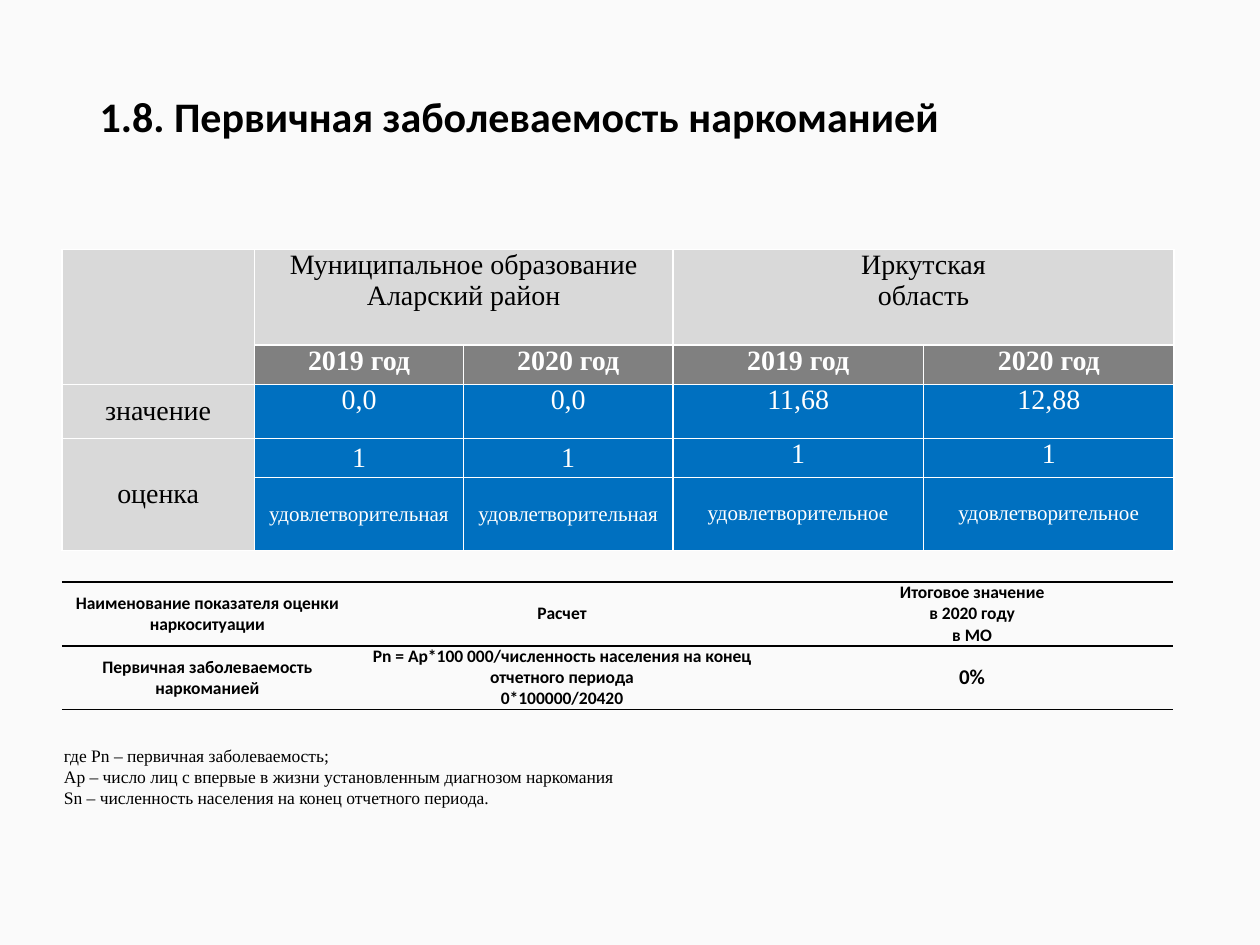
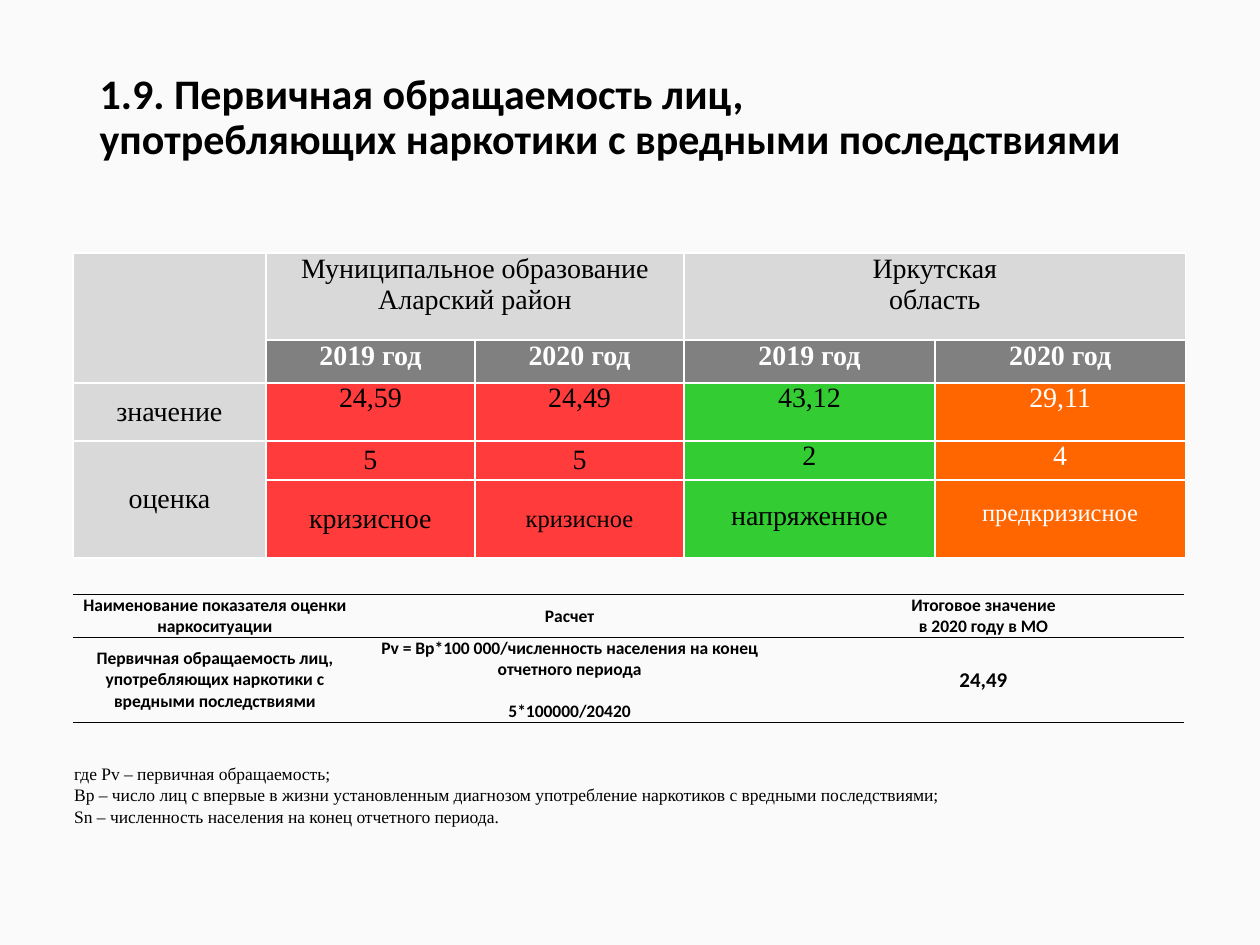
from itertools import product

from lxml.etree import SubElement
from pptx import Presentation
from pptx.dml.color import RGBColor
from pptx.enum.text import MSO_ANCHOR, MSO_AUTO_SIZE, PP_ALIGN
from pptx.oxml.ns import qn
from pptx.util import Inches, Pt

COLORS = {
    "background": "FAFAFA", "black": "000000", "white": "FFFFFF",
    "label": "D9D9D9", "year": "808080", "blue": "0070C0",
    "red": "FF3B3B", "green": "33CC33", "orange": "FF6600",
}
HEADING_FONT, TABLE_FONT = "Calibri", "Times New Roman"
REGIONS = ["Муниципальное образование Аларский район", "Иркутская\nобласть"]
YEARS = ["2019 год", "2020 год"] * 2
RATING_WIDTHS = [1.53, 1.66, 1.66, 1.99, 1.99]

# Each rating: value, score, verdict, verdict size, fill, text colour
SLIDES = [
    {
        "title": "1.8. Первичная заболеваемость наркоманией",
        "left": 0.49,
        "rating_top": 1.98,
        "rating_heights": [0.76, 0.31, 0.43, 0.31, 0.58],
        "verdict_drop": 0.19,
        "ratings": [
            ("0,0", "1", "удовлетворительная", 12, "blue", "white"),
            ("0,0", "1", "удовлетворительная", 12, "blue", "white"),
            ("11,68", "1", "удовлетворительное", 12, "blue", "white"),
            ("12,88", "1", "удовлетворительное", 12, "blue", "white"),
        ],
        "formula_top": 4.62,
        "formula_widths": [2.31, 3.32, 3.19],
        "formula_heights": [0.5, 0.5],
        "formula_gap": 0,
        "formula": [
            ["Наименование показателя оценки наркоситуации", "Расчет",
             "Итоговое значение\nв 2020 году\nв МО"],
            ["Первичная заболеваемость наркоманией",
             "Pn = Ap*100 000/численность населения на конец отчетного периода\n"
             "0*100000/20420", "0%"],
        ],
        "notes_box": (0.16, 5.86, 9.16, 0.61),
        "notes_indent": 0.25,
        "notes": [
            "где Pn – первичная заболеваемость;",
            "Ap – число лиц с впервые в жизни установленным диагнозом наркомания",
            "Sn – численность населения на конец отчетного периода.",
        ],
    },
    {
        "title": "1.9. Первичная обращаемость лиц,\v"
                 "употребляющих наркотики с вредными последствиями",
        "left": 0.58,
        "rating_top": 2.01,
        "rating_heights": [0.69, 0.34, 0.46, 0.31, 0.62],
        "verdict_drop": 0.16,
        "ratings": [
            ("24,59", "5", "кризисное", 16, "red", "black"),
            ("24,49", "5", "кризисное", 14, "red", "black"),
            ("43,12", "2", "напряженное", 16, "green", "black"),
            ("29,11", "4", "предкризисное", 14, "orange", "white"),
        ],
        "formula_top": 4.72,
        "formula_widths": [2.25, 3.38, 3.19],
        "formula_heights": [0.34, 0.67],
        "formula_gap": 12,
        "formula": [
            ["Наименование показателя оценки наркоситуации", "Расчет",
             "Итоговое значение\nв 2020 году в МО"],
            ["Первичная обращаемость лиц, употребляющих наркотики с вредными последствиями",
             "Pv = Bp*100 000/численность населения на конец отчетного периода\n"
             "5*100000/20420", "24,49"],
        ],
        "notes_box": (0.39, 6.01, 9.01, 0.61),
        "notes_indent": 0.1,
        "notes": [
            "где Pv – первичная обращаемость;",
            "Bp – число лиц с впервые в жизни установленным диагнозом "
            "употребление наркотиков с вредными последствиями;",
            "Sn – численность населения на конец отчетного периода.",
        ],
    },
]


def color(name):
    return RGBColor.from_string(COLORS[name])


def style_paragraph(paragraph, font_name, size, ink="black", bold=False, align=PP_ALIGN.CENTER):
    paragraph.alignment = align
    font = paragraph.font
    font.name, font.size, font.bold = font_name, Pt(size), bold
    font.color.rgb = color(ink)


def set_borders(cell, borders):
    """Draw 1 pt lines on the sides named in borders, and none on the rest."""
    properties = cell._tc.get_or_add_tcPr()
    for side in "LRTB":
        line = SubElement(properties, qn(f"a:ln{side}"), w=str(Pt(1)))
        if side in borders:
            fill = SubElement(line, qn("a:solidFill"))
            SubElement(fill, qn("a:srgbClr"), val=COLORS[borders[side]])
        else:
            SubElement(line, qn("a:noFill"))


def write_cell(cell, text, font_name, size, ink="black", bold=False, fill=None,
               borders=None, anchor=MSO_ANCHOR.MIDDLE, side_margin=0.05, top_margin=0):
    cell.text = text
    cell.vertical_anchor = anchor
    cell.margin_left = cell.margin_right = Inches(side_margin)
    cell.margin_top, cell.margin_bottom = Inches(top_margin), 0
    set_borders(cell, borders or {})
    if fill:
        cell.fill.solid()
        cell.fill.fore_color.rgb = color(fill)
    else:
        cell.fill.background()
    for paragraph in cell.text_frame.paragraphs:
        style_paragraph(paragraph, font_name, size, ink, bold)


def add_grid(slide, left, top, widths, heights):
    table = slide.shapes.add_table(
        len(heights), len(widths), Inches(left), Inches(top),
        Inches(sum(widths)), Inches(sum(heights))).table
    table.first_row = table.horz_banding = False
    for column, width in zip(table.columns, widths):
        column.width = Inches(width)
    for row, height in zip(table.rows, heights):
        row.height = Inches(height)
    return table


def add_title(slide, text):
    title = slide.shapes.title
    title.left, title.top, title.width, title.height = map(Inches, (0.69, 0.4, 8.62, 1.45))
    frame = title.text_frame
    frame.text = text
    frame.auto_size = MSO_AUTO_SIZE.NONE
    frame.vertical_anchor = MSO_ANCHOR.MIDDLE
    frame.margin_bottom = Inches(0.42)
    paragraph = frame.paragraphs[0]
    paragraph.line_spacing = 0.9
    style_paragraph(paragraph, HEADING_FONT, 24, bold=True, align=PP_ALIGN.LEFT)


def add_rating_table(slide, content):
    table = add_grid(slide, content["left"], content["rating_top"],
                     RATING_WIDTHS, content["rating_heights"])
    white_lines = dict.fromkeys("LRTB", "white")

    def write(row, column, text, size=16, **style):
        write_cell(table.cell(row, column), text, TABLE_FONT, size,
                   borders=white_lines, **style)

    # Row labels and region headings
    for row, label in enumerate(["", "", "значение", "оценка", ""]):
        write(row, 0, label, fill="label")
    for column, region in enumerate([REGIONS[0], "", REGIONS[1], ""], 1):
        write(0, column, region, fill="label", anchor=MSO_ANCHOR.TOP)

    # Years and ratings; the two regional columns are aligned to the top
    for column, (year, rating) in enumerate(zip(YEARS, content["ratings"]), 1):
        value, score, verdict, verdict_size, fill, ink = rating
        regional = column > 2
        low_anchor = MSO_ANCHOR.TOP if regional else MSO_ANCHOR.MIDDLE
        write(1, column, year, ink="white", bold=True, fill="year", anchor=MSO_ANCHOR.TOP)
        write(2, column, value, ink=ink, fill=fill, anchor=MSO_ANCHOR.TOP)
        write(3, column, score, ink=ink, fill=fill, anchor=low_anchor)
        write(4, column, verdict, verdict_size, ink=ink, fill=fill, anchor=low_anchor,
              top_margin=content["verdict_drop"] if regional else 0)

    for first, last in [((0, 0), (1, 0)), ((0, 1), (0, 2)), ((0, 3), (0, 4)), ((3, 0), (4, 0))]:
        table.cell(*first).merge(table.cell(*last))


def add_formula_table(slide, content):
    table = add_grid(slide, content["left"], content["formula_top"],
                     content["formula_widths"], content["formula_heights"])
    for row, column in product(range(2), range(3)):
        is_result = (row, column) == (1, 2)
        write_cell(table.cell(row, column), content["formula"][row][column], HEADING_FONT,
                   12 if is_result else 10, bold=True, side_margin=0.07,
                   borders={"T": "black", "B": "black"})
    calculation = table.cell(1, 1).text_frame.paragraphs[1]
    calculation.space_before = Pt(content["formula_gap"])


def add_notes_text(slide, content):
    box = slide.shapes.add_textbox(*map(Inches, content["notes_box"]))
    frame = box.text_frame
    frame.word_wrap = True
    frame.auto_size = MSO_AUTO_SIZE.SHAPE_TO_FIT_TEXT
    frame.text = "\n".join(content["notes"])
    for paragraph in frame.paragraphs:
        style_paragraph(paragraph, TABLE_FONT, 10, align=PP_ALIGN.JUSTIFY)
        paragraph._p.get_or_add_pPr().set("indent", str(Inches(content["notes_indent"])))


def main():
    presentation = Presentation()
    presentation.slide_width, presentation.slide_height = Inches(10), Inches(7.5)
    background = presentation.slide_master.background.fill
    background.solid()
    background.fore_color.rgb = color("background")

    title_only = presentation.slide_layouts[5]
    for content in SLIDES:
        slide = presentation.slides.add_slide(title_only)
        add_title(slide, content["title"])
        add_rating_table(slide, content)
        add_formula_table(slide, content)
        add_notes_text(slide, content)
    presentation.save("out.pptx")


if __name__ == "__main__":
    main()
